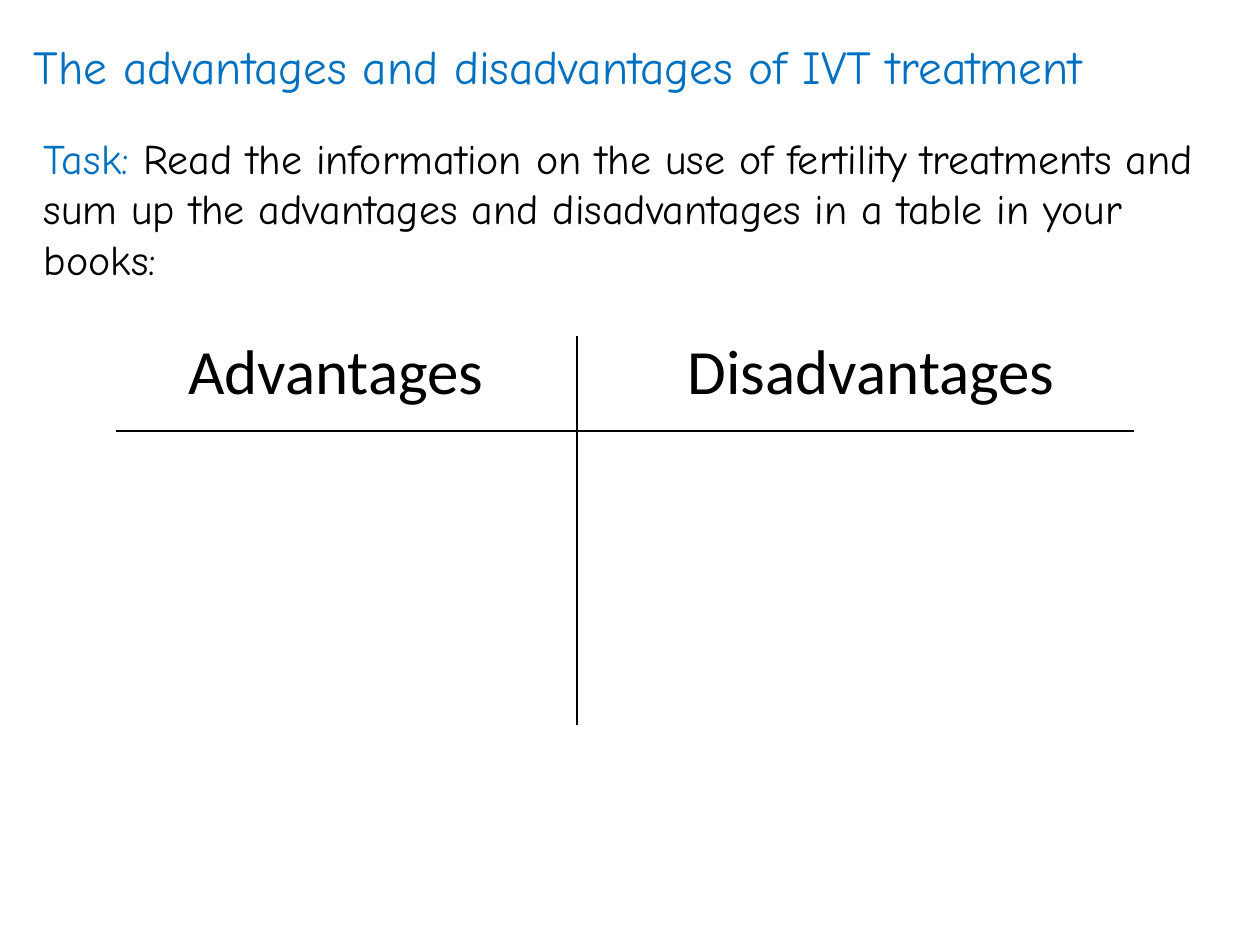
from pptx import Presentation
from pptx.dml.color import RGBColor
from pptx.enum import shapes, text
from pptx.oxml.ns import qn
from pptx.util import Inches, Pt
from lxml import etree

BLUE = "0070C0"
BLACK = "000000"
HAND_FONT = "Comic Neue"
HEADING_FONT = "Calibri"


def color(value):
    return RGBColor.from_string(value)


def add_text(slide, box, runs, size, font=HAND_FONT, align=text.PP_ALIGN.LEFT):
    shape = slide.shapes.add_textbox(*(Inches(length) for length in box))
    frame = shape.text_frame
    frame.word_wrap = True
    paragraph = frame.paragraphs[0]
    paragraph.alignment = align
    for words, run_color in runs:
        run = paragraph.add_run()
        run.text = words
        run.font.size = Pt(size)
        run.font.name = font
        run.font.color.rgb = color(run_color)
    return shape


def add_line(slide, start, end):
    points = (Inches(length) for length in (*start, *end))
    line = slide.shapes.add_connector(shapes.MSO_CONNECTOR.STRAIGHT, *points)
    line.line.color.rgb = color(BLACK)
    line.line.width = Pt(0.75)
    etree.SubElement(line._element.spPr, qn("a:effectLst"))


def add_title(slide, box):
    title = "The advantages and disadvantages of IVT treatment"
    add_text(slide, box, [(title, BLUE)], 27)


def add_task(slide, box):
    instruction = (
        "Read the information on the use of fertility treatments and sum up "
        "the advantages and disadvantages in a table in your books:"
    )
    add_text(slide, box, [("Task: ", BLUE), (instruction, BLACK)], 24)


def add_comparison(slide, box):
    left, top, width, height = box
    divider = left + 3.66
    rule = top + 0.75
    for heading, offset in (("Advantages", 0.16), ("Disadvantages", 4.41)):
        heading_box = (left + offset, top - 0.09, 3.17, 0.71)
        add_text(slide, heading_box, [(heading, BLACK)], 36,
                 font=HEADING_FONT, align=text.PP_ALIGN.CENTER)
    add_line(slide, (left, rule), (left + width, rule))
    add_line(slide, (divider, top), (divider, top + height))


def main():
    presentation = Presentation()
    presentation.slide_width = Inches(10)
    presentation.slide_height = Inches(7.5)
    slide = presentation.slides.add_slide(presentation.slide_layouts[6])
    add_title(slide, (0.17, 0.25, 9.58, 0.56))
    add_task(slide, (0.25, 1, 9.33, 1.31))
    add_comparison(slide, (0.92, 2.67, 8.08, 3.08))
    presentation.save("out.pptx")


if __name__ == "__main__":
    main()
